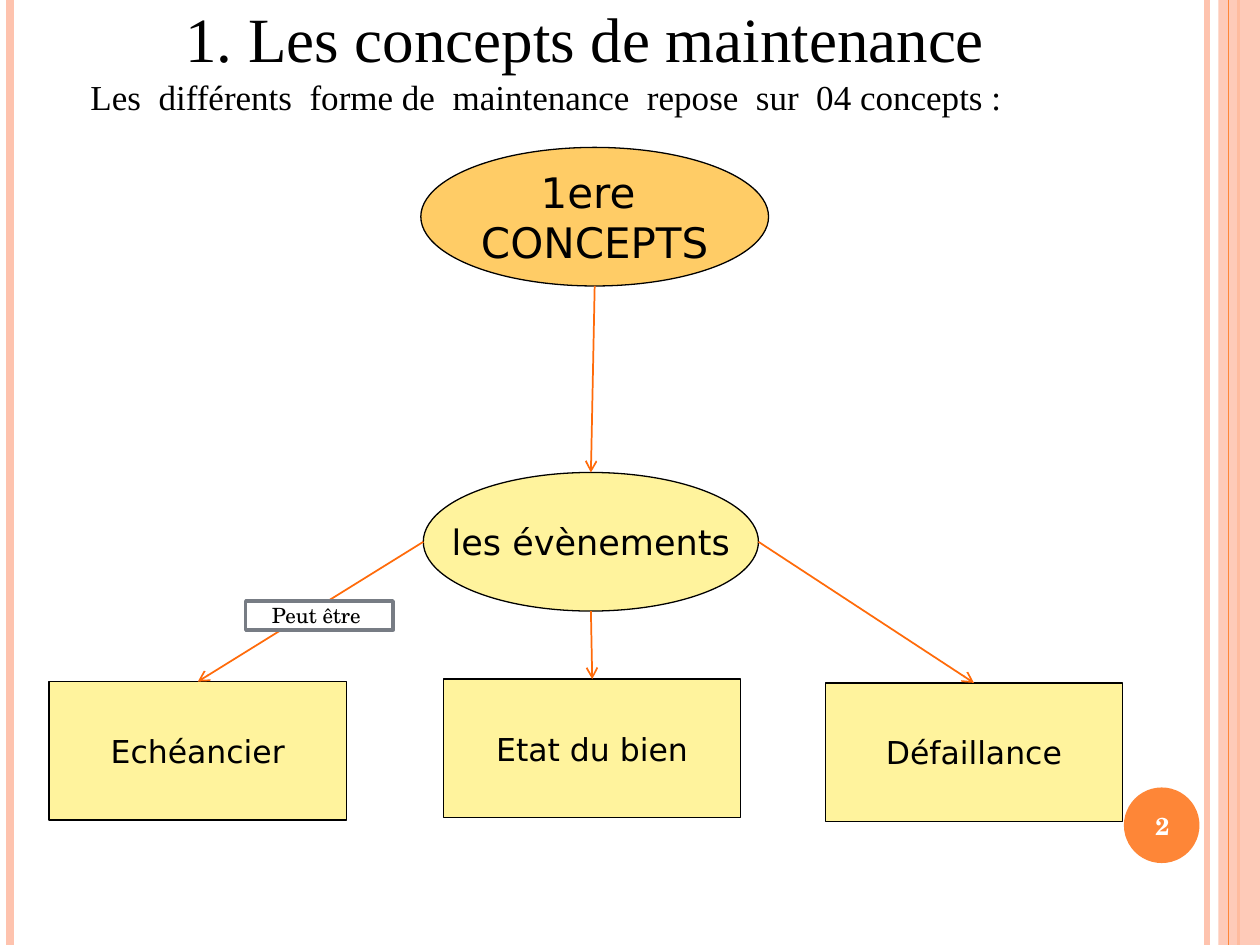
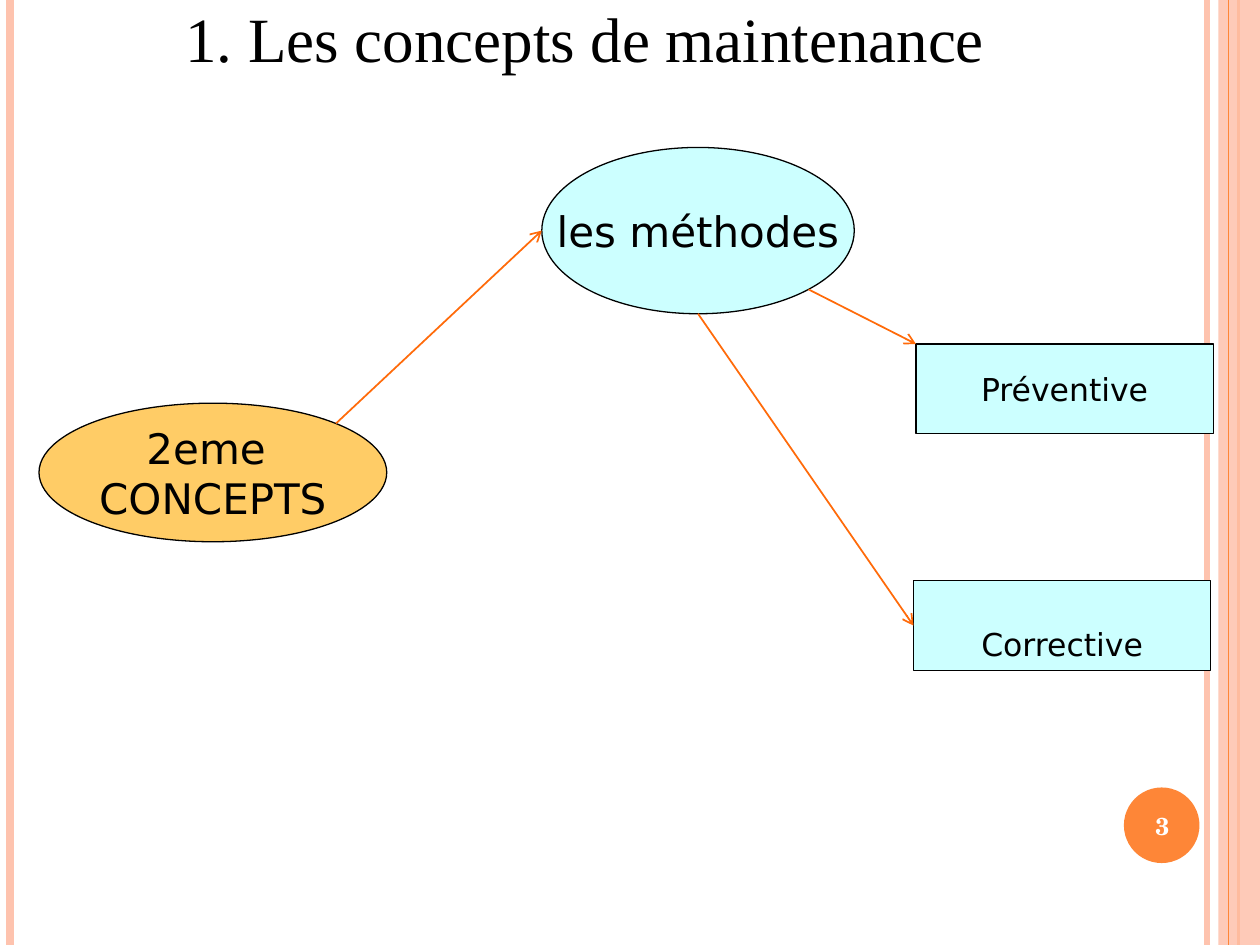
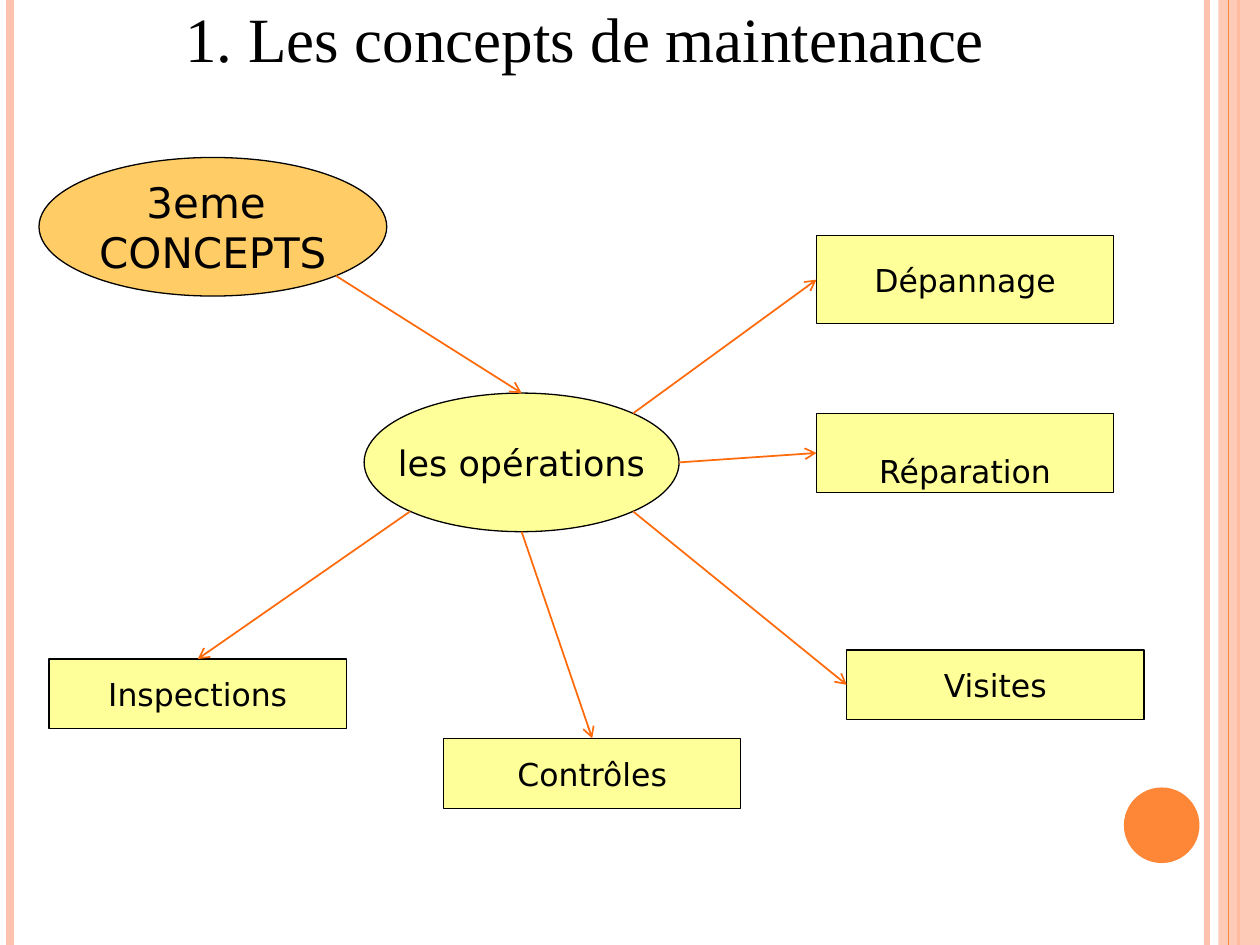
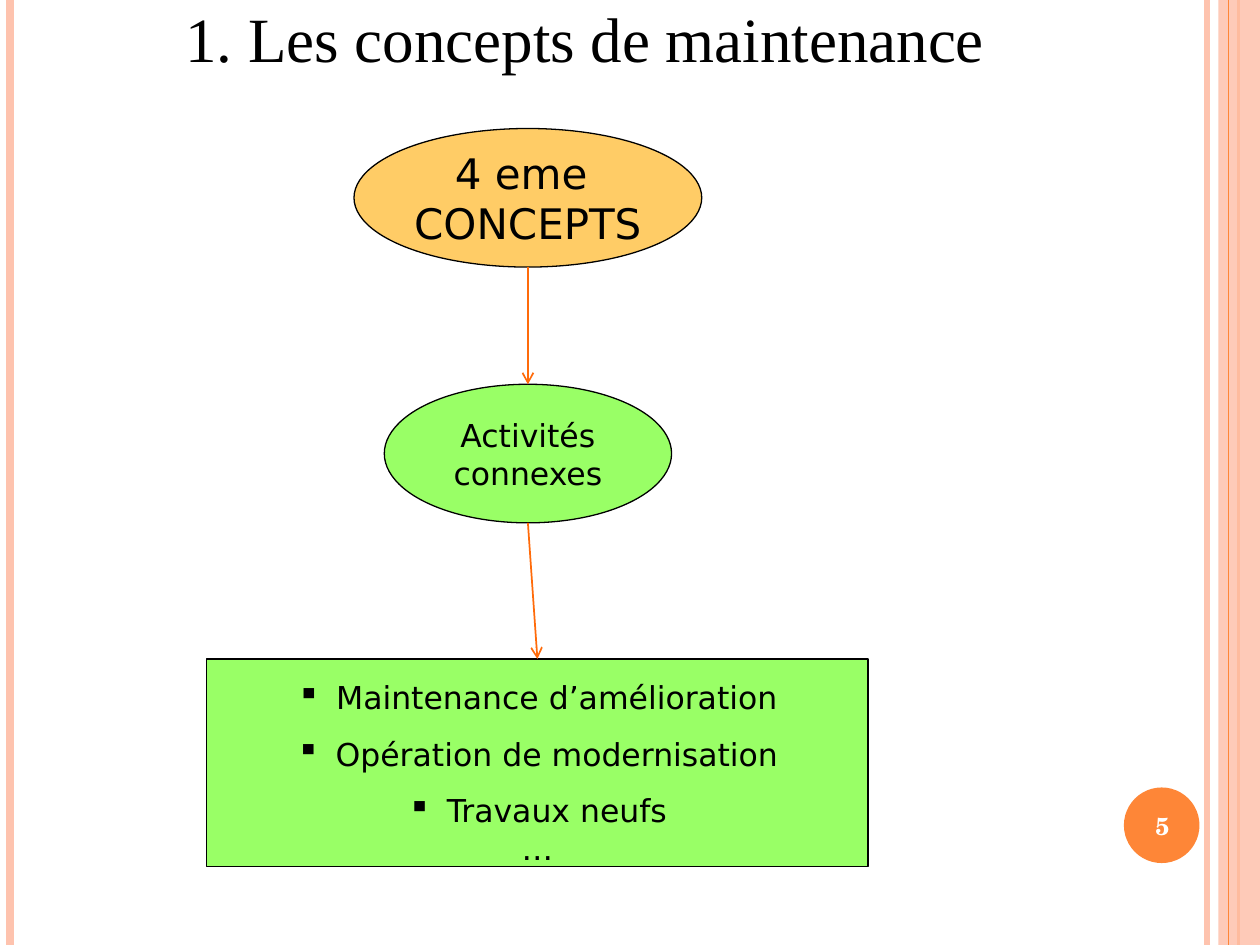
"""Build four slides on the concepts of maintenance."""
from lxml.etree import SubElement
from pptx import Presentation
from pptx.dml.color import RGBColor as RGB
from pptx.enum.shapes import MSO_CONNECTOR as CONN, MSO_SHAPE as SHAPE
from pptx.enum.text import MSO_ANCHOR as ANCHOR, PP_ALIGN as ALIGN
from pptx.oxml.ns import qn
from pptx.util import Inches, Pt


class Theme:
    black, white, grey = "000000", "FFFFFF", "777C84"
    orange, peach, arrow = "FE8637", "FEC3AE", "FF6B0A"
    concept, cream, cyan, yellow, green = "FFCC66", "FFF39D", "CCFFFF", "FFFF99", "99FF66"
    serif, sans, heading = "TeX Gyre Schola", "DejaVu Sans", "Times New Roman"
    title, large, medium, body, page, label = 36, 24, 20, 18, 14, 12
    outline = 0.75


T = Theme
OVAL, RECT = SHAPE.OVAL, SHAPE.RECTANGLE
TITLE = "1. Les concepts de maintenance "

SITES = {
    "top": (0.5, 0), "left": (0, 0.5), "bottom": (0.5, 1), "right": (1, 0.5),
    "upper right": (0.854, 0.146), "lower right": (0.854, 0.854),
    "lower left": (0.146, 0.854), "corner": (0, 0),
}


def box(s, kind, at, fill=None, line=None, lines=(), size=T.body, name=T.sans,
        color=T.black, bold=False, width=T.outline, **frame):
    at = [Inches(v) for v in at]
    sp = s.shapes.add_shape(kind, *at) if kind else s.shapes.add_textbox(*at)
    if kind:
        sp.shadow.inherit = False
        sp.fill.solid()
        sp.fill.fore_color.rgb = RGB.from_string(fill)
        if line:
            sp.line.color.rgb = RGB.from_string(line)
            sp.line.width = Pt(width)
        else:
            sp.line.fill.background()
    tf = sp.text_frame
    for k, v in {"word_wrap": True, "vertical_anchor": ANCHOR.MIDDLE, **frame}.items():
        setattr(tf, k, v)
    for i, text in enumerate(lines):
        p = tf.add_paragraph() if i else tf.paragraphs[0]
        p.alignment = ALIGN.CENTER
        r = p.add_run()
        r.text = text
        for k, v in {"size": Pt(size), "name": name, "bold": bold}.items():
            setattr(r.font, k, v)
        r.font.color.rgb = RGB.from_string(color)
    return sp


def stroke(s, start, end, color, width, head=False):
    c = s.shapes.add_connector(CONN.STRAIGHT, *[Inches(v) for v in (*start, *end)])
    c.line.color.rgb = RGB.from_string(color)
    c.line.width = Pt(width)
    if head:
        SubElement(c.line._get_or_add_ln(), qn("a:tailEnd"), type="arrow")
    SubElement(c._element.spPr, qn("a:effectLst"))
    return c


SLIDES = [
    {
        "page": "2",
        "subtitle": "Les  différents  forme de  maintenance  repose  sur  04 concepts :",
        "nodes": {
            "concept": (OVAL, (3.34, 1.17, 2.76, 1.1), T.concept, T.large, ["1ere ", "CONCEPTS"]),
            "events": (OVAL, (3.36, 3.75, 2.66, 1.1), T.cream, T.medium, ["les évènements"]),
            "schedule": (RECT, (0.39, 5.41, 2.36, 1.1), T.cream, T.body, ["Echéancier"]),
            "state": (RECT, (3.52, 5.39, 2.36, 1.1), T.cream, T.body, ["Etat du bien"]),
            "failure": (RECT, (6.55, 5.42, 2.36, 1.1), T.cream, T.body, ["Défaillance"]),
        },
        "arrows": [
            ("concept", "bottom", "events", "top"),
            ("events", "left", "schedule", "top"),
            ("events", "bottom", "state", "top"),
            ("events", "right", "failure", "top"),
        ],
        "label": "Peut être ",
    },
    {
        "page": "3",
        "nodes": {
            "methods": (OVAL, (4.3, 1.17, 2.48, 1.32), T.cyan, T.large, ["les méthodes"]),
            "preventive": (RECT, (7.27, 2.73, 2.36, 0.71), T.cyan, T.body, ["Préventive"]),
            "concept": (OVAL, (0.31, 3.2, 2.76, 1.1), T.concept, T.large, ["2eme ", "CONCEPTS"]),
            "corrective": (RECT, (7.25, 4.61, 2.36, 0.71), T.cyan, T.body, ["Corrective"]),
        },
        "lowered": "corrective",
        "arrows": [
            ("concept", "upper right", "methods", "left"),
            ("methods", "lower right", "preventive", "corner"),
            ("methods", "bottom", "corrective", "left"),
        ],
    },
    {
        "nodes": {
            "operations": (OVAL, (2.89, 3.12, 2.5, 1.1), T.yellow, T.medium, ["les opérations"]),
            "visits": (RECT, (6.72, 5.16, 2.36, 0.55), T.yellow, T.body, ["Visites"]),
            "concept": (OVAL, (0.31, 1.25, 2.76, 1.1), T.concept, T.large, ["3eme ", "CONCEPTS"]),
            "inspections": (RECT, (0.39, 5.23, 2.36, 0.55), T.yellow, T.body, ["Inspections"]),
            "checks": (RECT, (3.52, 5.86, 2.36, 0.56), T.yellow, T.body, ["Contrôles"]),
            "repair": (RECT, (6.48, 3.28, 2.36, 0.63), T.yellow, T.body, ["Réparation"]),
            "fixing": (RECT, (6.48, 1.87, 2.36, 0.7), T.yellow, T.body, ["Dépannage"]),
        },
        "lowered": "repair",
        "arrows": [
            ("concept", "lower right", "operations", "top"),
            ("operations", "upper right", "fixing", "left"),
            ("operations", "right", "repair", "left"),
            ("operations", "lower right", "visits", "left"),
            ("operations", "bottom", "checks", "top"),
            ("operations", "lower left", "inspections", "top"),
        ],
    },
    {
        "page": "5",
        "nodes": {
            "activities": (OVAL, (3.05, 3.05, 2.28, 1.1), T.green, T.body, ["Activités", "connexes"]),
            "works": (RECT, (1.64, 5.23, 5.25, 1.65), T.green, T.body,
                      ["Maintenance d’amélioration", "Opération de modernisation",
                       "Travaux neufs", "…"]),
            "concept": (OVAL, (2.81, 1.02, 2.76, 1.1), T.concept, T.large, ["4 eme ", "CONCEPTS"]),
        },
        "bulleted": "works",
        "arrows": [
            ("concept", "bottom", "activities", "top"),
            ("activities", "bottom", "works", "top"),
        ],
    },
]

prs = Presentation()
prs.slide_width, prs.slide_height = Inches(10), Inches(7.5)

for data in SLIDES:
    s = prs.slides.add_slide(prs.slide_layouts[6])

    for x, color, width in [(9.58, T.peach, 3), (0.08, T.peach, 4.5), (9.83, T.orange, 1.5)]:
        stroke(s, (x, 0), (x, 7.5), color, width)
    band = box(s, RECT, (9.67, 0, 0.33, 7.5), T.peach)
    tint = band._element.spPr.find(".//" + qn("a:srgbClr"))
    SubElement(tint, qn("a:alpha"), val="87000")
    stroke(s, (9.75, 0), (9.75, 7.5), T.orange, 0.75)
    box(s, OVAL, (8.92, 6.25, 0.6, 0.6), T.orange)
    if "page" in data:
        box(s, None, (8.89, 6.27, 0.67, 0.57), lines=[data["page"]], size=T.page,
            name=T.serif, color=T.white, bold=True)

    lines = [TITLE] + ([data["subtitle"]] if "subtitle" in data else [])
    title = box(s, None, (0.62, 0, 8.17, 0.94), lines=lines, size=T.title, name=T.heading,
                vertical_anchor=ANCHOR.TOP, margin_top=0)
    for p in title.text_frame.paragraphs[1:]:
        p.alignment = ALIGN.LEFT
        p.runs[0].font.size = Pt(T.medium)

    for key, (kind, at, fill, size, lines) in data["nodes"].items():
        sp = box(s, kind, at, fill, T.black, lines, size, word_wrap=False)
        if key == data.get("lowered"):
            sp.text_frame.margin_top = Inches(0.34)
        if key == data.get("bulleted"):
            for p in sp.text_frame.paragraphs[:-1]:
                p.line_spacing = 1.5
                pPr = p._p.get_or_add_pPr()
                for k, v in {"marL": 0.31, "indent": -0.31}.items():
                    pPr.set(k, str(Inches(v)))
                SubElement(pPr, qn("a:buChar"), char="▪")

    for source, start, target, end in data["arrows"]:
        points = []
        for key, site in [(source, start), (target, end)]:
            x, y, w, h = data["nodes"][key][1]
            fx, fy = SITES[site]
            points.append((x + w * fx, y + h * fy))
        stroke(s, *points, T.arrow, 1, head=True)

    if "label" in data:
        box(s, RECT, (1.95, 4.77, 1.17, 0.23), T.white, T.grey, [data["label"]],
            T.label, T.serif, width=2)

prs.save("out.pptx")
